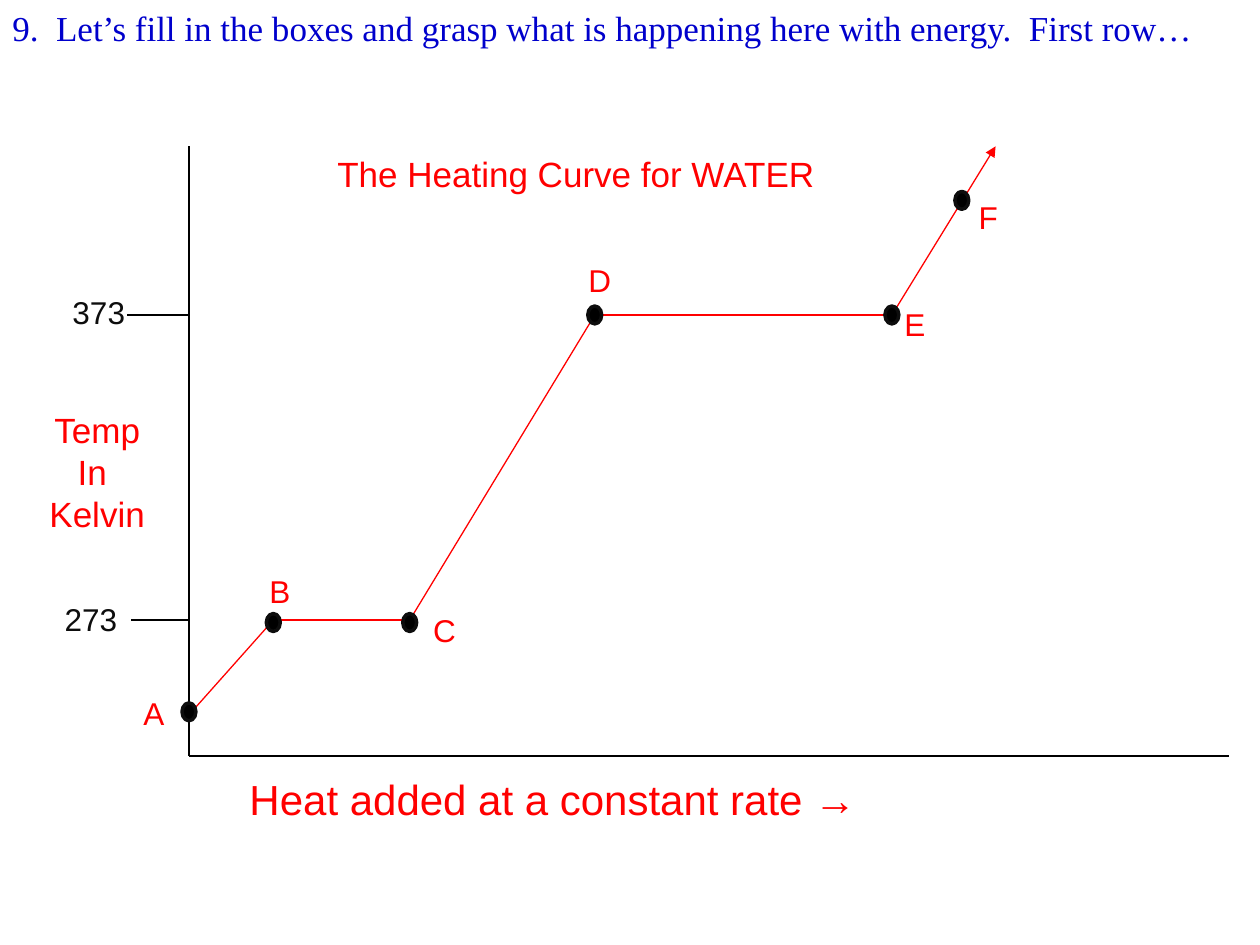
from lxml.etree import SubElement
from pptx import Presentation
from pptx.dml.color import RGBColor
from pptx.enum.shapes import MSO_CONNECTOR, MSO_SHAPE
from pptx.enum.text import MSO_AUTO_SIZE, PP_ALIGN
from pptx.oxml.ns import qn
from pptx.util import Cm, Pt

BLACK = RGBColor(0x00, 0x00, 0x00)
NEAR_BLACK = RGBColor(0x0D, 0x0D, 0x0D)
RED = RGBColor(0xFF, 0x00, 0x00)
BLUE = RGBColor(0x00, 0x00, 0xCC)

DOT_WIDTH, DOT_HEIGHT = 0.28, 0.36
LABEL_WIDTH, LABEL_HEIGHT = 0.79, 1.02
TICK_LABEL_WIDTH = 1.98


def add_text(slide, box, lines, size, color, align=PP_ALIGN.LEFT, font="Arial"):
    shape = slide.shapes.add_textbox(*(Cm(length) for length in box))
    frame = shape.text_frame
    frame.word_wrap = True
    frame.auto_size = MSO_AUTO_SIZE.SHAPE_TO_FIT_TEXT
    frame.text = "\n".join(lines)
    for paragraph in frame.paragraphs:
        paragraph.alignment = align
        paragraph.font.size = Pt(size)
        paragraph.font.name = font
        paragraph.font.color.rgb = color


def add_line(slide, start, end, color, arrow=False):
    connector = slide.shapes.add_connector(
        MSO_CONNECTOR.STRAIGHT, *(Cm(length) for length in (*start, *end))
    )
    connector.line.color.rgb = color
    connector.line.width = Pt(0.75)
    properties = connector._element.spPr
    if arrow:
        SubElement(properties.find(qn("a:ln")), qn("a:tailEnd"), type="triangle")
    SubElement(properties, qn("a:effectLst"))


def add_dot(slide, x, y):
    dot = slide.shapes.add_shape(
        MSO_SHAPE.OVAL,
        Cm(x - DOT_WIDTH / 2),
        Cm(y - DOT_HEIGHT / 2),
        Cm(DOT_WIDTH),
        Cm(DOT_HEIGHT),
    )
    dot.shadow.inherit = False
    dot.fill.solid()
    dot.fill.fore_color.rgb = BLACK
    dot.line.color.rgb = NEAR_BLACK
    dot.line.width = Pt(2)


def add_question(slide, left, top, width, height):
    question = (
        "9.\u00a0 Let’s fill in the boxes and grasp what is happening here "
        "with energy.\u00a0 First row…"
    ).replace("\u00a0", " ")
    add_text(slide, (left, top, width, height), [question], 20, BLUE,
             font="Times New Roman")


def add_axes(slide, left, top, width, height):
    origin = (left, top + height)
    add_line(slide, (left, top), origin, BLACK)
    add_line(slide, origin, (left + width, top + height), BLACK)
    add_text(slide, (left - 3.12, top + 5.16, 2.54, 2.82),
             ["Temp", "In ", "Kelvin"], 20, RED, PP_ALIGN.CENTER)
    add_text(slide, (left + 0.97, top + height + 0.23, 16.08, 1.27),
             ["Heat added at a constant rate →"], 24, RED)
    ticks = [("273", 9.55, 1.17, -3.18, 9.02), ("373", 3.4, 1.24, -3.02, 2.84)]
    for name, y, length, label_x, label_y in ticks:
        add_line(slide, (left, top + y), (left - length, top + y), BLACK)
        add_text(slide,
                 (left + label_x, top + label_y, TICK_LABEL_WIDTH, LABEL_HEIGHT),
                 [name], 18, NEAR_BLACK, PP_ALIGN.RIGHT)


def add_heating_curve(slide, left, top):
    add_text(slide, (left + 2.74, top, 16.08, 1.12),
             ["The Heating Curve for WATER"], 20, RED)
    route = [(0, 11.46), (1.7, 9.55), (4.45, 9.55),
             (8.18, 3.4), (14.17, 3.4), (16.26, 0)]
    corners = [(left + x, top + y) for x, y in route]
    for start, end in zip(corners, corners[1:]):
        add_line(slide, start, end, RED, arrow=end == corners[-1])
    points = [
        ("A", 0, 11.4, -1.17, 10.92),
        ("B", 1.7, 9.6, 1.37, 8.46),
        ("C", 4.45, 9.6, 4.67, 9.25),
        ("D", 8.18, 3.4, 7.8, 2.18),
        ("E", 14.17, 3.4, 14.17, 3.07),
        ("F", 15.58, 1.09, 15.67, 0.91),
    ]
    for name, x, y, label_x, label_y in points:
        add_dot(slide, left + x, top + y)
        add_text(slide,
                 (left + label_x, top + label_y, LABEL_WIDTH, LABEL_HEIGHT),
                 [name], 18, RED,
                 PP_ALIGN.LEFT if name == "F" else PP_ALIGN.CENTER)


def main():
    presentation = Presentation()
    presentation.slide_width = Cm(25.4)
    presentation.slide_height = Cm(19.05)
    slide = presentation.slides.add_slide(presentation.slide_layouts[6])
    add_axes(slide, 3.81, 2.95, 20.96, 12.29)
    add_heating_curve(slide, 3.81, 2.95)
    add_question(slide, 0, 0, 25.4, 1.96)
    presentation.save("out.pptx")


if __name__ == "__main__":
    main()
